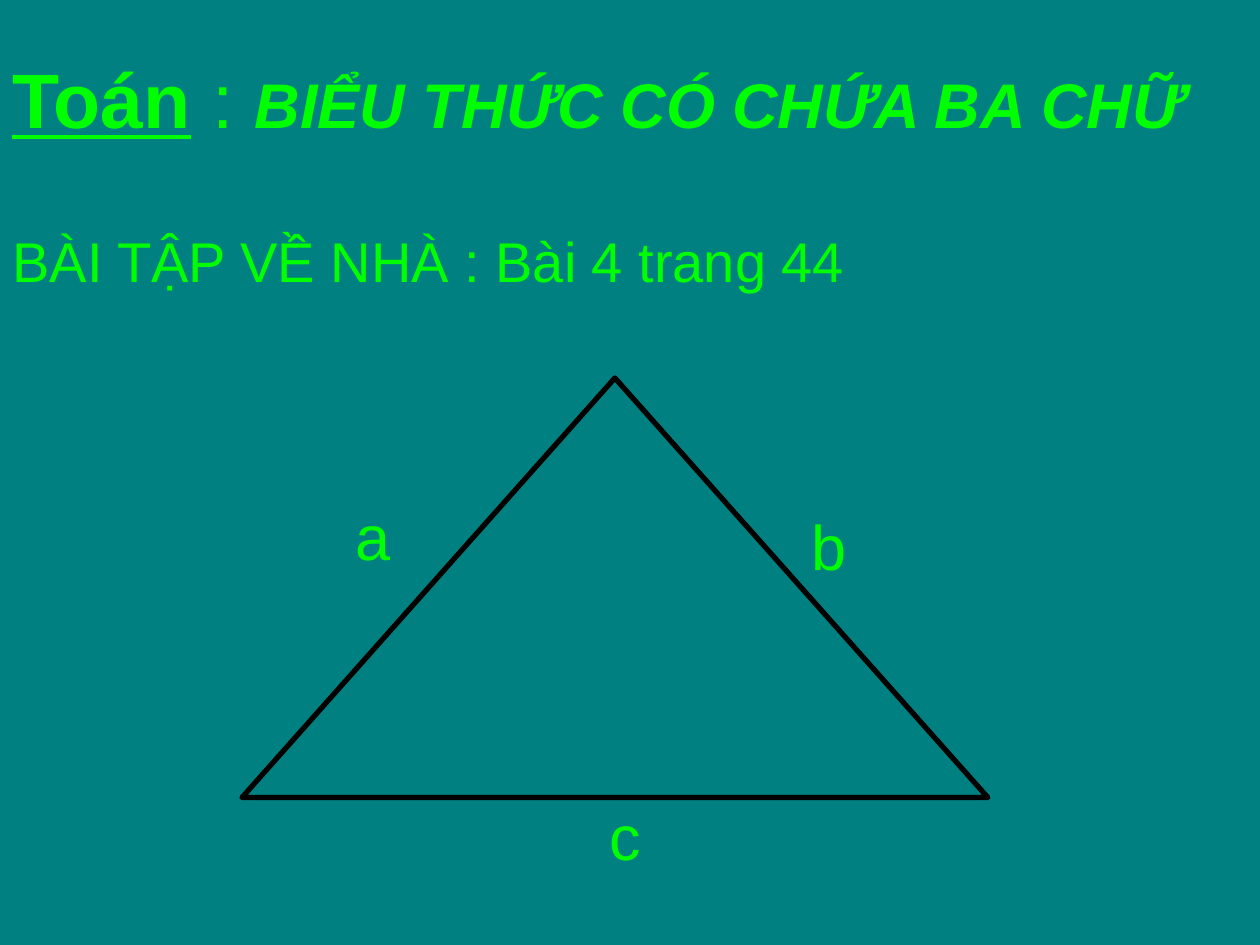
from pptx import Presentation
from pptx.dml.color import RGBColor
from pptx.enum.shapes import MSO_SHAPE
from pptx.enum.text import MSO_ANCHOR, PP_ALIGN
from pptx.util import Inches, Pt

COLORS = {"background": "008080", "text": "00FF00", "outline": "000000"}


def add_run(paragraph, text, size, bold=False, italic=False, underline=False):
    run = paragraph.add_run()
    run.text = text
    run.font.name = "Arial"
    run.font.size = Pt(size)
    run.font.bold = bold
    run.font.italic = italic
    run.font.underline = underline
    run.font.color.rgb = RGBColor.from_string(COLORS["text"])


def add_outlined_shape(kind, left, top, width, height, line_color, line_width):
    shape = slide.shapes.add_shape(
        kind, Inches(left), Inches(top), Inches(width), Inches(height))
    shape.shadow.inherit = False
    shape.fill.solid()
    shape.fill.fore_color.rgb = RGBColor.from_string(COLORS["background"])
    shape.line.color.rgb = RGBColor.from_string(COLORS[line_color])
    shape.line.width = Pt(line_width)
    return shape


presentation = Presentation()
presentation.slide_width = Inches(10)
presentation.slide_height = Inches(7.5)
slide = presentation.slides.add_slide(presentation.slide_layouts[6])
slide.background.fill.solid()
slide.background.fill.fore_color.rgb = RGBColor.from_string(COLORS["background"])

# Lesson title
title = slide.shapes.add_textbox(0, 0, Inches(10), Inches(1.55))
title.text_frame.word_wrap = True
title.text_frame.vertical_anchor = MSO_ANCHOR.MIDDLE
paragraph = title.text_frame.paragraphs[0]
add_run(paragraph, "Toán", 44, bold=True, underline=True)
add_run(paragraph, " : ", 44)
add_run(paragraph, "BIỂU THỨC CÓ CHỨA BA CHỮ", 36, bold=True, italic=True)

# Homework
homework = slide.shapes.add_textbox(0, Inches(1.75), Inches(10), Inches(5.75))
homework.text_frame.word_wrap = True
paragraph = homework.text_frame.paragraphs[0]
paragraph.space_before = Pt(6.4)
add_run(paragraph, "BÀI TẬP VỀ NHÀ : Bài 4 trang 44", 32)

# Triangle
add_outlined_shape(MSO_SHAPE.ISOSCELES_TRIANGLE, 1.92, 3, 5.92, 3.33, "outline", 3)

# Side labels
side_labels = [
    ("a", 2.67, 4, 0.58, 0.5),
    ("b", 6.33, 4.08, 0.5, 0.5),
    ("c", 4.42, 6.42, 1.08, 0.42),
]
for letter, left, top, width, height in side_labels:
    label = add_outlined_shape(
        MSO_SHAPE.RECTANGLE, left, top, width, height, "background", 0.75)
    label.text_frame.word_wrap = False
    label.text_frame.vertical_anchor = MSO_ANCHOR.MIDDLE
    paragraph = label.text_frame.paragraphs[0]
    paragraph.alignment = PP_ALIGN.CENTER
    add_run(paragraph, letter, 36)

presentation.save("out.pptx")
